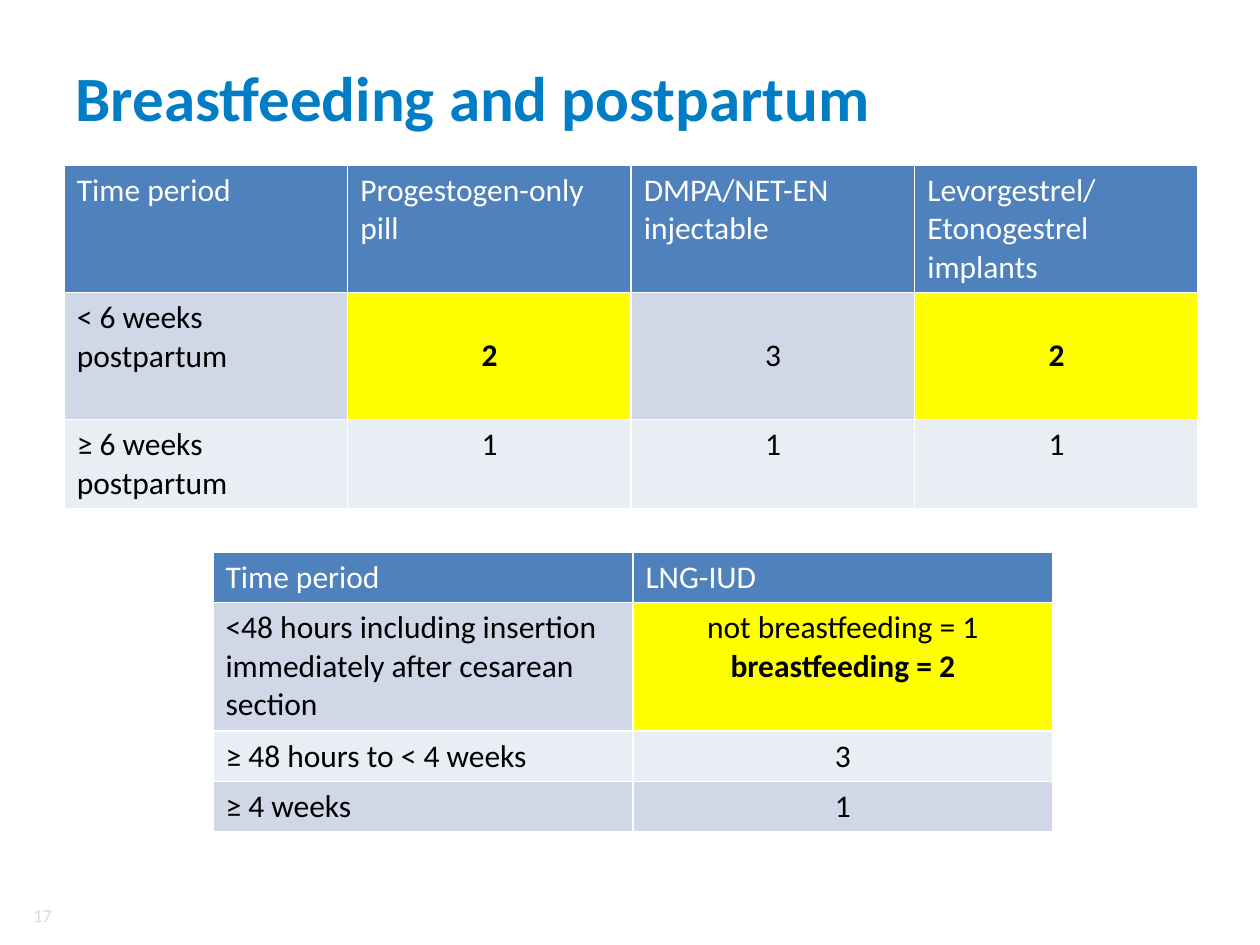
from dataclasses import dataclass

from pptx import Presentation
from pptx import util as u
from pptx.dml.color import RGBColor
from pptx.enum import text


@dataclass(frozen=True)
class Theme:
    font: str = "Calibri"
    title: str = "007DC5"
    header: str = "4F81BD"
    bands: tuple = ("D0D8E8", "E9EDF4")
    highlight: str = "FFFF00"
    light: str = "FFFFFF"
    dark: str = "000000"
    muted: str = "D9D9D9"
    title_size: float = 36
    table_size: float = 18
    number_size: float = 10.5


THEME = Theme()
WIDTH, HEIGHT = 10, 7.5
LEFT, CENTER, RIGHT = (text.PP_ALIGN.LEFT, text.PP_ALIGN.CENTER,
                       text.PP_ALIGN.RIGHT)
TOP, MIDDLE = text.MSO_ANCHOR.TOP, text.MSO_ANCHOR.MIDDLE


@dataclass(frozen=True)
class Rating:
    """A table entry; its bold lines are given by index."""
    words: str
    bold_lines: tuple = ()
    highlighted: bool = False
    anchor: object = TOP


def inches(box):
    return [u.Inches(length) for length in box]


def write(frame, words, size=THEME.table_size, color=THEME.dark,
          align=LEFT, bold_lines=()):
    """Write one paragraph for each line of words."""
    frame.word_wrap = True
    for index, line in enumerate(words.split("\n")):
        paragraph = frame.paragraphs[0] if index == 0 else frame.add_paragraph()
        paragraph.alignment = align
        run = paragraph.add_run()
        run.text = line
        run.font.name = THEME.font
        run.font.size = u.Pt(size)
        run.font.bold = index in bold_lines
        run.font.color.rgb = RGBColor.from_string(color)


def add_title(slide, box, words):
    title = slide.shapes.title
    title.left, title.top, title.width, title.height = inches(box)
    title.text_frame.vertical_anchor = MIDDLE
    write(title.text_frame, words, size=THEME.title_size,
          color=THEME.title, bold_lines=(0,))


def add_slide_number(slide, box, number):
    frame = slide.shapes.add_textbox(*inches(box)).text_frame
    frame.vertical_anchor = MIDDLE
    write(frame, number, size=THEME.number_size, color=THEME.muted, align=RIGHT)


def fill_cell(cell, color):
    cell.fill.solid()
    cell.fill.fore_color.rgb = RGBColor.from_string(color)


def add_rating_table(slide, box, headings, periods, row_shares):
    """Place a heading row, then one banded row for each time period."""
    left, top, width, height = box
    table = slide.shapes.add_table(len(periods) + 1, len(headings),
                                   *inches(box)).table
    for column in table.columns:
        column.width = u.Inches(width / len(headings))
    for row, share in zip(table.rows, row_shares):
        row.height = u.Inches(height * share / sum(row_shares))

    # Headings
    for column, heading in enumerate(headings):
        cell = table.cell(0, column)
        fill_cell(cell, THEME.header)
        write(cell.text_frame, heading, color=THEME.light)

    # Time periods and their ratings
    for index, (period, *ratings) in enumerate(periods):
        band = THEME.bands[index % 2]
        period_cell = table.cell(index + 1, 0)
        fill_cell(period_cell, band)
        write(period_cell.text_frame, period)
        for column, rating in enumerate(ratings, start=1):
            cell = table.cell(index + 1, column)
            fill_cell(cell, THEME.highlight if rating.highlighted else band)
            cell.vertical_anchor = rating.anchor
            write(cell.text_frame, rating.words, align=CENTER,
                  bold_lines=rating.bold_lines)


def build_slide(slide):
    margin = WIDTH * 0.05
    add_slide_number(slide, (0.12, HEIGHT * 0.952, 0.39, 0.24), "17")
    add_title(slide, (margin, HEIGHT * 0.04, WIDTH - 2 * margin, 0.93),
              "Breastfeeding and postpartum")

    # Hormonal methods
    two = Rating("2", bold_lines=(0,), highlighted=True, anchor=MIDDLE)
    one = Rating("1")
    add_rating_table(
        slide, (0.51, 1.31, WIDTH * 0.9, 2.73),
        ["Time period", "Progestogen-only pill", "DMPA/NET-EN injectable",
         "Levorgestrel/\nEtonogestrel implants"],
        [("< 6 weeks postpartum", two, Rating("3", anchor=MIDDLE), two),
         ("≥ 6 weeks postpartum", one, one, one)],
        row_shares=(1.01, 1.01, 0.71))

    # Intrauterine device
    add_rating_table(
        slide, (1.69, 4.38, WIDTH * 2 / 3, 2.22),
        ["Time period", "LNG-IUD"],
        [("<48 hours including insertion immediately after cesarean section",
          Rating("not breastfeeding = 1\nbreastfeeding = 2",
                 bold_lines=(1,), highlighted=True)),
         ("≥ 48 hours to < 4 weeks", Rating("3")),
         ("≥ 4 weeks", one)],
        row_shares=(0.4, 1.02, 0.4, 0.4))


def main():
    deck = Presentation()
    deck.slide_width, deck.slide_height = inches((WIDTH, HEIGHT))
    title_only = deck.slide_layouts[5]
    build_slide(deck.slides.add_slide(title_only))
    deck.save("out.pptx")


if __name__ == "__main__":
    main()
